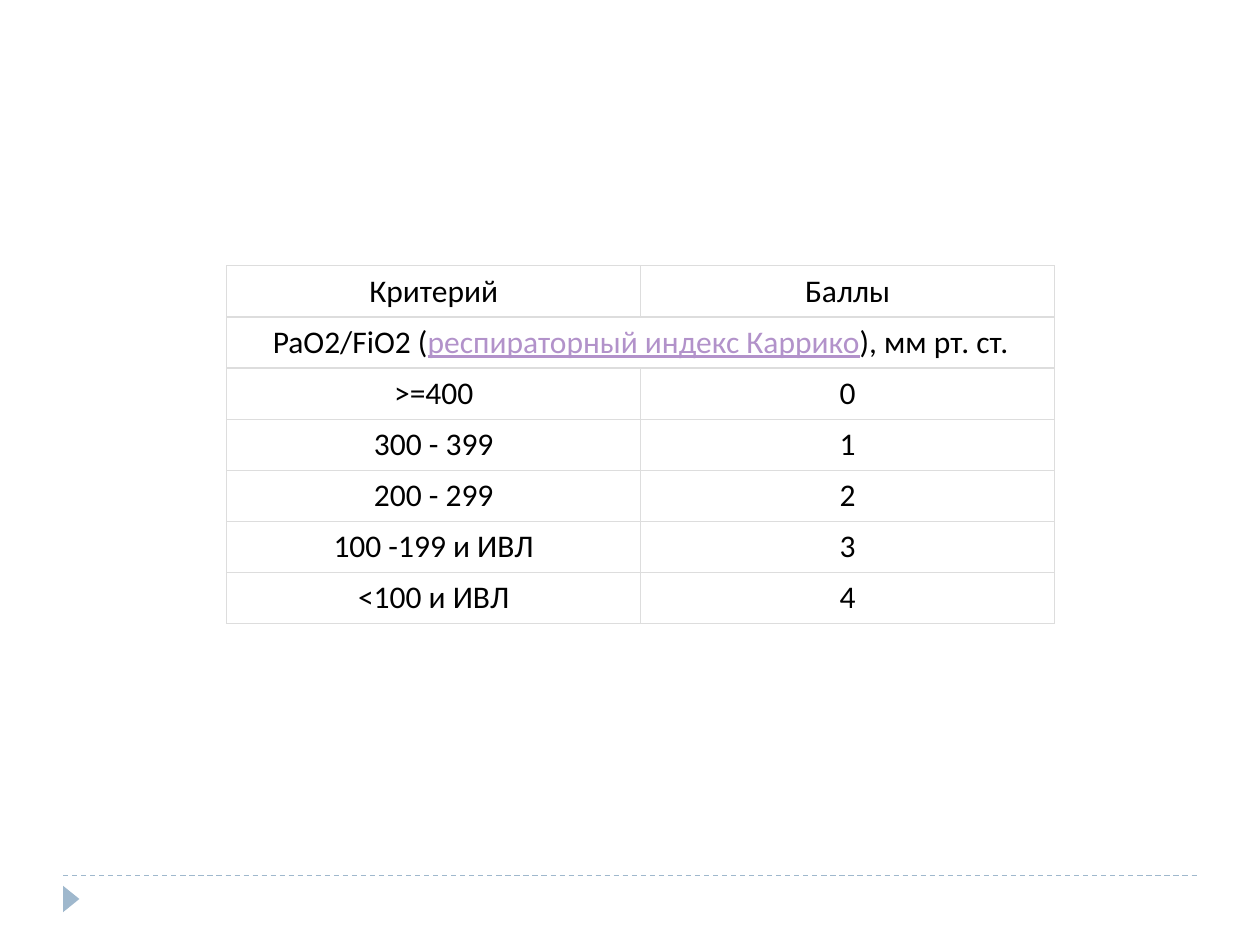
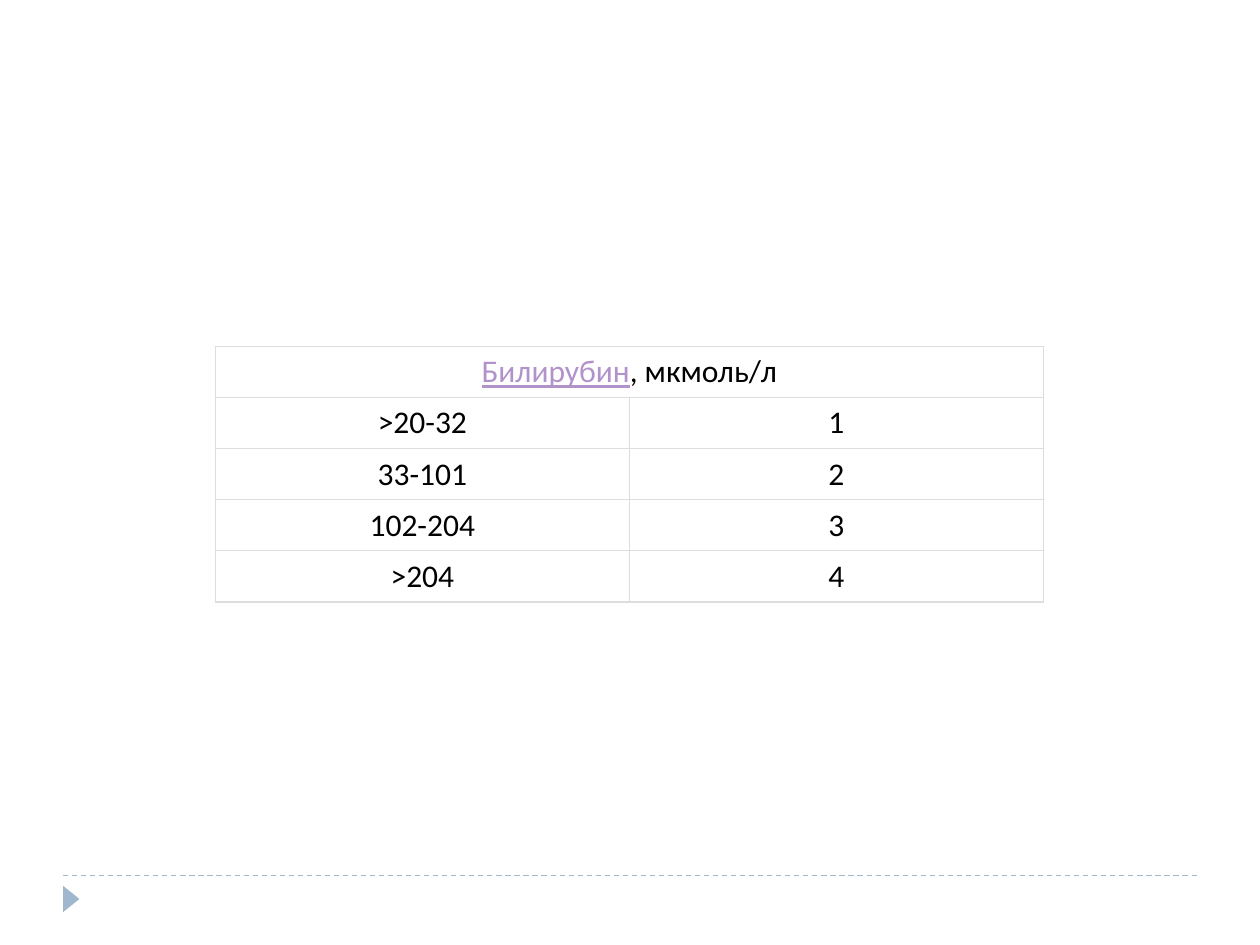
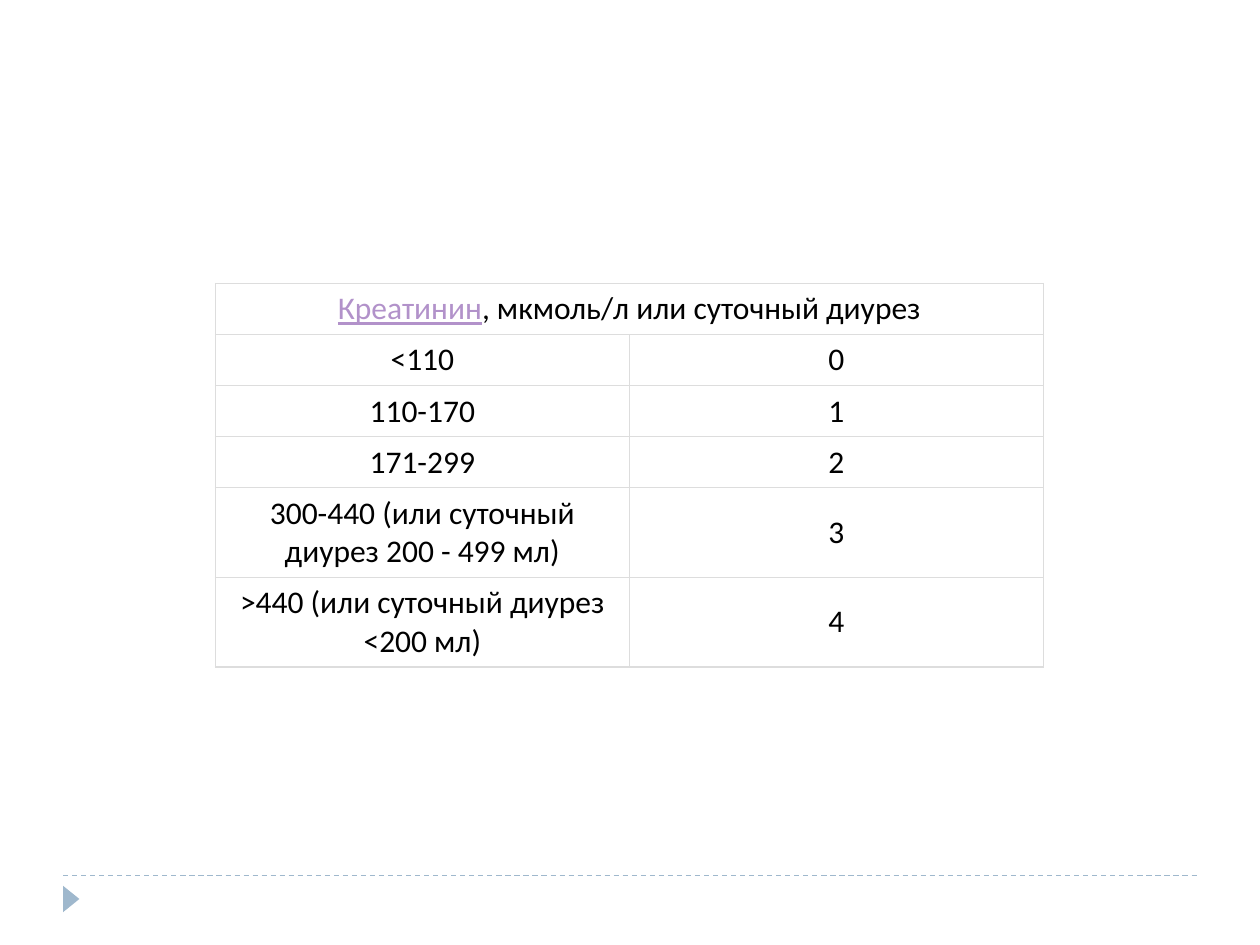
"""Build three slides of organ failure score tables."""
from dataclasses import dataclass

from lxml.etree import SubElement as Sub
from pptx import Presentation
from pptx.dml.color import RGBColor as RGB
from pptx.enum.dml import MSO_LINE as Dash
from pptx.enum.shapes import MSO_CONNECTOR as Link, MSO_SHAPE as Form
from pptx.enum.text import MSO_ANCHOR as Anchor, PP_ALIGN as Align
from pptx.oxml.ns import qn
from pptx.slide import Slide
from pptx.table import _Cell as Cell
from pptx.util import Inches, Pt

BLACK = RGB(0x00, 0x00, 0x00)
WHITE = RGB(0xFF, 0xFF, 0xFF)
BLUE = RGB(0x9F, 0xB8, 0xCD)
LILAC = RGB(0xB2, 0x92, 0xCA)
GREY = RGB(0xDD, 0xDD, 0xDD)
FONT = "Calibri"
WIDE = Inches(6.57)
ROW = Inches(0.4)
RULE = Pt(0.75)


@dataclass
class Title:
    term: str
    after: str
    before: str = ""


@dataclass
class Score:
    left: float
    top: float
    title: Title
    rows: list[tuple[str, str]]
    head: tuple[str, str] | None = None


SCORES = [
    Score(1.8, 2.11,
          Title("респираторный индекс Каррико", "), мм рт. ст.", "PaO2/FiO2 ("),
          [(">=400", "0"), ("300 - 399", "1"), ("200 - 299", "2"),
           ("100 -199 и ИВЛ", "3"), ("<100 и ИВЛ", "4")],
          ("Критерий", "Баллы")),
    Score(1.71, 2.75, Title("Билирубин", ", мкмоль/л"),
          [(">20-32", "1"), ("33-101", "2"), ("102-204", "3"), (">204", "4")]),
    Score(1.71, 2.25, Title("Креатинин", ", мкмоль/л или суточный диурез"),
          [("<110", "0"), ("110-170", "1"), ("171-299", "2"),
           ("300-440 (или суточный диурез 200 - 499 мл)", "3"),
           (">440 (или суточный диурез <200 мл)", "4")]),
]


def write(cell: Cell, text: str, *, color: RGB = BLACK, under: bool = False,
          size: float = 18) -> None:
    """Add a run of centred text to a cell."""
    para = cell.text_frame.paragraphs[0]
    para.alignment = Align.CENTER
    run = para.add_run()
    run.text = text
    font = run.font
    font.name, font.size, font.underline = FONT, Pt(size), under
    font.color.rgb = color


def frame(cell: Cell) -> None:
    """Give a cell thin borders, no fill and middle anchoring."""
    props = cell._tc.get_or_add_tcPr()
    for side in ("lnL", "lnR", "lnT", "lnB"):
        edge = Sub(props, qn(f"a:{side}"), w=str(RULE))
        Sub(Sub(edge, qn("a:solidFill")), qn("a:srgbClr"), val=str(GREY))
    cell.fill.background()
    cell.vertical_anchor = Anchor.MIDDLE


def draw_foot(slide: Slide) -> None:
    """Draw the dashed rule and the arrow mark under it."""
    rule = slide.shapes.add_connector(
        Link.STRAIGHT, Inches(0.5), Inches(6.95), Inches(9.5), Inches(6.95))
    rule.line.color.rgb = BLUE
    rule.line.width = RULE
    rule.line.dash_style = Dash.DASH
    Sub(rule._element.spPr, qn("a:effectLst"))
    mark = slide.shapes.add_shape(
        Form.ISOSCELES_TRIANGLE, Inches(0.46), Inches(7.07), Inches(0.21), Inches(0.13))
    mark.rotation = 90
    mark.shadow.inherit = False
    mark.fill.solid()
    mark.fill.fore_color.rgb = BLUE
    mark.line.fill.background()


def draw_score(slide: Slide, score: Score) -> None:
    """Draw a score table with its spanning title row."""
    heads = [score.head] if score.head else []
    span = len(heads)
    lines = [*heads, None, *score.rows]
    table = slide.shapes.add_table(
        len(lines), 2, Inches(score.left), Inches(score.top),
        WIDE, ROW * len(lines)).table
    table.first_row = table.horz_banding = False
    for cell in table.iter_cells():
        frame(cell)
    table.cell(span, 0).merge(table.cell(span, 1))
    for row, line in enumerate(lines):
        if line:
            for col, text in enumerate(line):
                write(table.cell(row, col), text)
    name, cell = score.title, table.cell(span, 0)
    if name.before:
        write(cell, name.before)
    write(cell, name.term, color=LILAC, under=True)
    write(cell, name.after)


def main() -> None:
    """Build and save the deck."""
    deck = Presentation()
    deck.slide_width, deck.slide_height = Inches(10), Inches(7.5)
    for score in SCORES:
        slide = deck.slides.add_slide(deck.slide_layouts[6])
        slide.background.fill.solid()
        slide.background.fill.fore_color.rgb = WHITE
        draw_foot(slide)
        draw_score(slide, score)
    deck.save("out.pptx")


if __name__ == "__main__":
    main()
